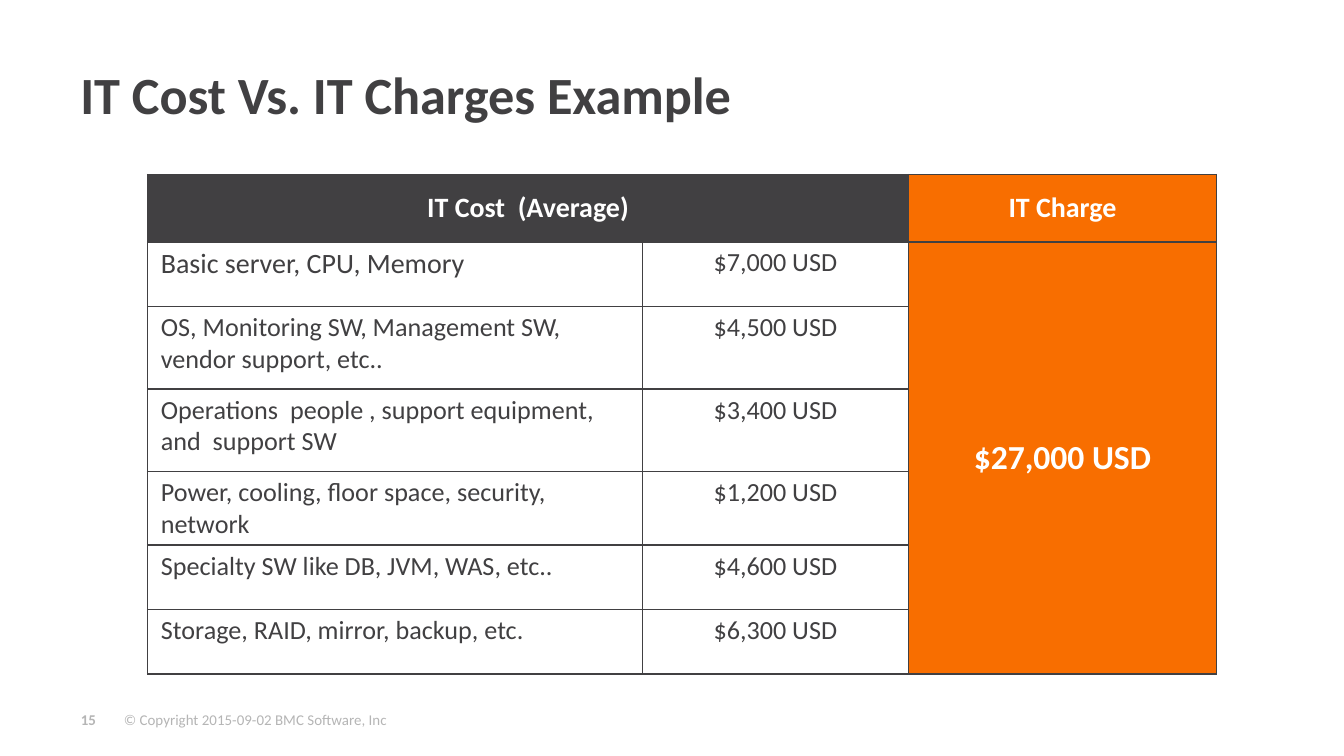
from lxml.etree import SubElement
from pptx import Presentation
from pptx.dml.color import RGBColor
from pptx.enum.text import MSO_ANCHOR, PP_ALIGN
from pptx.oxml.ns import qn
from pptx.util import Cm, Pt

COLORS = {"dark": "414042", "orange": "F86E00", "white": "FFFFFF", "gray": "B5B5B5"}
FONT = "Calibri"

COLUMN_WIDTHS = [9.35, 5.03, 5.82]
ROW_HEIGHTS = [1.27, 1.22, 1.56, 1.56, 1.39, 1.22, 1.22]
COSTS = [
    ("Basic server, CPU, Memory", "$7,000 USD"),
    ("OS, Monitoring SW, Management SW, vendor support, etc..", "$4,500 USD"),
    ("Operations  people , support equipment, and  support SW", "$3,400 USD"),
    ("Power, cooling, floor space, security, network", "$1,200 USD"),
    ("Specialty SW like DB, JVM, WAS, etc..", "$4,600 USD"),
    ("Storage, RAID, mirror, backup, etc.", "$6,300 USD"),
]


def write(frame, text, size=14, color="dark", bold=False, align=PP_ALIGN.LEFT):
    """Put one formatted paragraph into a text frame."""
    frame.word_wrap = True
    para = frame.paragraphs[0]
    para.alignment = align
    span = para.add_run()
    span.text = text
    span.font.name = FONT
    span.font.size = Pt(size)
    span.font.bold = bold
    span.font.color.rgb = RGBColor.from_string(COLORS[color])


def add_text(page, left, top, width, height, text, inset=0.0, anchor=MSO_ANCHOR.TOP, **style):
    box = page.shapes.add_textbox(Cm(left), Cm(top), Cm(width), Cm(height))
    frame = box.text_frame
    frame.margin_left = frame.margin_right = Cm(inset)
    frame.margin_top = frame.margin_bottom = Cm(inset / 2)
    frame.vertical_anchor = anchor
    write(frame, text, **style)


def add_borders(cell, color="dark", width=1):
    properties = cell._tc.get_or_add_tcPr()
    for side in ("a:lnL", "a:lnR", "a:lnT", "a:lnB"):
        line = SubElement(properties, qn(side), w=str(Pt(width)))
        fill = SubElement(line, qn("a:solidFill"))
        SubElement(fill, qn("a:srgbClr"), val=COLORS[color])


def fill_cell(cell, text, fill=None, **style):
    """Filled cells are centred emphasis cells; the others are plain body cells."""
    cell.margin_left = cell.margin_right = Cm(0.2 if fill else 0.25)
    cell.margin_top = cell.margin_bottom = Cm(0.1)
    if fill:
        cell.vertical_anchor = MSO_ANCHOR.MIDDLE
        cell.fill.solid()
        cell.fill.fore_color.rgb = RGBColor.from_string(COLORS[fill])
        style = {"color": "white", "bold": True, "align": PP_ALIGN.CENTER, **style}
    write(cell.text_frame, text, **style)


def add_title(page, left, top, width, height):
    add_text(page, left, top, width, height, "IT Cost Vs. IT Charges Example",
             inset=0.25, anchor=MSO_ANCHOR.MIDDLE, size=28, bold=True)


def add_cost_table(page, left, top):
    table = page.shapes.add_table(
        len(ROW_HEIGHTS), len(COLUMN_WIDTHS), Cm(left), Cm(top),
        Cm(sum(COLUMN_WIDTHS)), Cm(sum(ROW_HEIGHTS))).table
    table.first_row = table.horz_banding = False
    for column, width in zip(table.columns, COLUMN_WIDTHS):
        column.width = Cm(width)
    for row, height in zip(table.rows, ROW_HEIGHTS):
        row.height = Cm(height)
    for cell in table.iter_cells():
        add_borders(cell)
        cell.fill.background()

    # Header row
    table.cell(0, 0).merge(table.cell(0, 1))
    fill_cell(table.cell(0, 0), "IT Cost  (Average)", fill="dark", size=15)
    fill_cell(table.cell(0, 2), "IT Charge", fill="orange", size=15)

    # Cost rows, the first label slightly larger
    for row, (label, cost) in enumerate(COSTS, start=1):
        fill_cell(table.cell(row, 0), label, size=15 if row == 1 else 14)
        fill_cell(table.cell(row, 1), cost, align=PP_ALIGN.CENTER)

    # One charge across all cost rows
    table.cell(1, 2).merge(table.cell(len(COSTS), 2))
    fill_cell(table.cell(1, 2), "$27,000 USD", fill="orange", size=18)


def add_footer(page, left, top, height):
    add_text(page, left, top, 0.8, height, "15", size=8, color="gray", bold=True)
    add_text(page, left + 0.81, top, 12.57, height,
             "© Copyright 2015-09-02 BMC Software, Inc", size=8, color="gray")


def main():
    deck = Presentation()
    deck.slide_width, deck.slide_height = Cm(25.4), Cm(14.29)
    page = deck.slides.add_slide(deck.slide_layouts[6])
    add_footer(page, 1.53, 13.44, 0.45)
    add_title(page, 1.27, 0.58, 22.86, 2.39)
    add_cost_table(page, 2.79, 3.3)
    deck.save("out.pptx")


if __name__ == "__main__":
    main()
